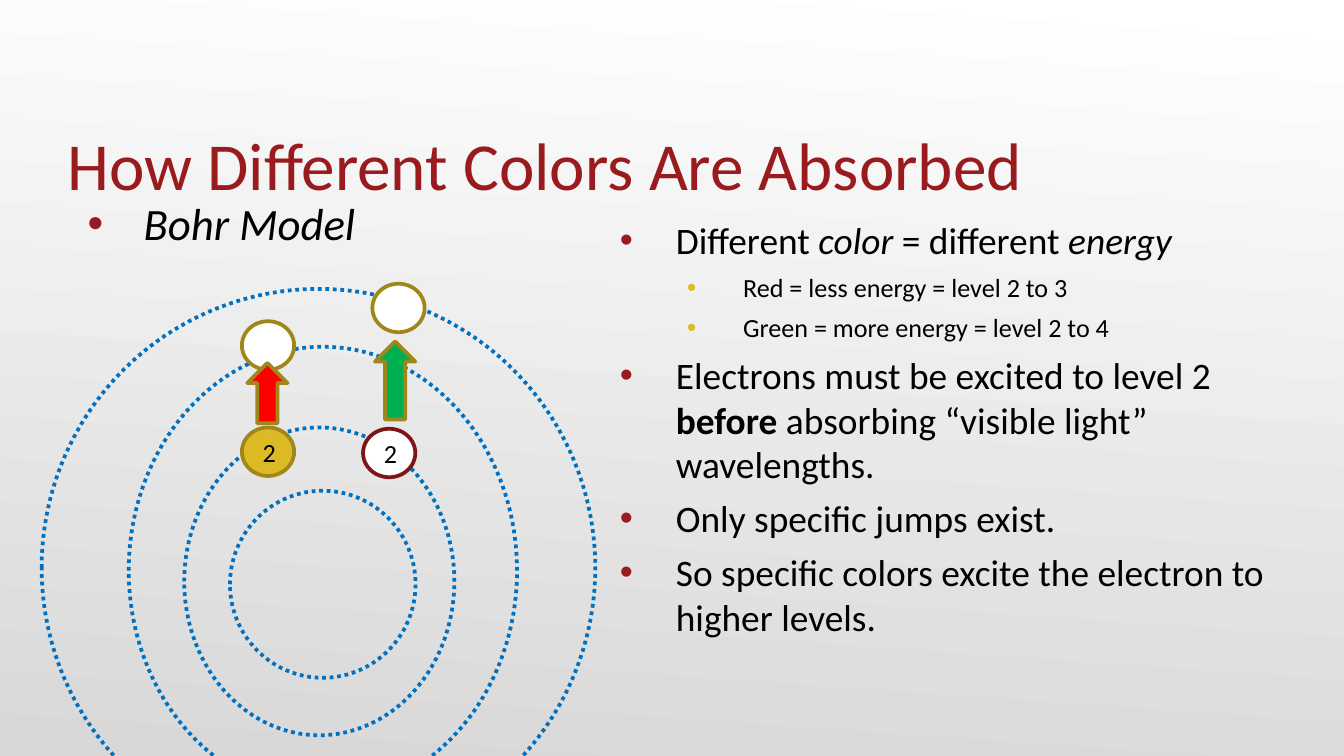
from lxml import etree
from pptx import Presentation
from pptx.dml.color import RGBColor
from pptx.enum.dml import MSO_LINE
from pptx.enum.shapes import MSO_SHAPE as Preset
from pptx.enum.text import MSO_ANCHOR as Anchor, PP_ALIGN as Align
from pptx.oxml.ns import qn
from pptx.util import Pt

FONT = "Calibri"
BLACK, WHITE = "000000", "FFFFFF"
RED, DARK_RED = "991B1E", "7D1619"
GOLD, DARK_GOLD = "DCBA25", "A0871B"
ORBIT_BLUE = "0070C0"
ELECTRON_SIZE = (28, 26)


def color(hex_code):
    return RGBColor.from_string(hex_code)


def set_font(font, size, hex_code):
    font.name = FONT
    font.size = Pt(size)
    font.color.rgb = color(hex_code)


def paint_background(slide):
    fill = slide.background.fill
    fill.gradient()
    fill.gradient_angle = 266
    for stop, hex_code in zip(fill.gradient_stops, (WHITE, "D8D8D8")):
        stop.color.rgb = color(hex_code)


def add_text_area(slide, left, top, width, height):
    area = slide.shapes.add_textbox(Pt(left), Pt(top), Pt(width), Pt(height))
    area.text_frame.word_wrap = True
    return area.text_frame


def add_title(slide, wording):
    frame = add_text_area(slide, 36, 42, 648, 67.5)
    frame.vertical_anchor = Anchor.BOTTOM
    frame.margin_left = frame.margin_right = frame.margin_bottom = 0
    heading = frame.paragraphs[0]
    heading.text = wording
    set_font(heading.font, 36, RED)


def add_bullet(paragraph, level, bullet_color):
    paragraph.level = level
    properties = paragraph._p.get_or_add_pPr()
    properties.set("marL", str(Pt(36 * (level + 1))))
    properties.set("indent", str(Pt(-30)))
    tint = etree.SubElement(properties, qn("a:buClr"))
    etree.SubElement(tint, qn("a:srgbClr"), val=bullet_color)
    etree.SubElement(properties, qn("a:buFont"), typeface="Arial")
    etree.SubElement(properties, qn("a:buChar"), char="•")


def add_bullets(slide, box, points):
    frame = add_text_area(slide, *box)
    for index, (level, size, pieces) in enumerate(points):
        point = frame.add_paragraph() if index else frame.paragraphs[0]
        add_bullet(point, level, GOLD if level else RED)
        if index:
            point.space_before = Pt(4.8)
        set_font(point.font, size, BLACK)
        for wording, emphasis in pieces:
            run = point.add_run()
            run.text = wording
            if emphasis == "italic":
                run.font.italic = True
            elif emphasis == "bold":
                run.font.bold = True


def add_outlined(slide, preset, box, line_color, fill_color=None):
    outlined = slide.shapes.add_shape(preset, *(Pt(length) for length in box))
    outlined.shadow.inherit = False
    outlined.line.color.rgb = color(line_color)
    outlined.line.width = Pt(2)
    if fill_color:
        outlined.fill.solid()
        outlined.fill.fore_color.rgb = color(fill_color)
    else:
        outlined.fill.background()
    return outlined


def add_orbit(slide, *box):
    orbit = add_outlined(slide, Preset.OVAL, box, ORBIT_BLUE)
    orbit.line.dash_style = MSO_LINE.ROUND_DOT


def add_electron(slide, left, top, line_color, fill_color, level=""):
    box = (left, top, *ELECTRON_SIZE)
    electron = add_outlined(slide, Preset.OVAL, box, line_color, fill_color)
    if level:
        frame = electron.text_frame
        frame.vertical_anchor = Anchor.MIDDLE
        label = frame.paragraphs[0]
        label.text = level
        label.alignment = Align.CENTER
        set_font(label.font, 14, BLACK)


def add_jump(slide, left, top, height, fill_color):
    box = (left, top, 21.6, height)
    add_outlined(slide, Preset.UP_ARROW, box, DARK_GOLD, fill_color)


def add_bohr_model(slide):
    add_orbit(slide, 98.7, 229, 144.7, 164.9)
    add_orbit(slide, 22.3, 154.8, 296.6, 298.8)
    add_orbit(slide, 69, 185.8, 208, 239.8)
    add_orbit(slide, 123.2, 262.9, 99.4, 100.2)

    add_electron(slide, 129.6, 229, DARK_GOLD, GOLD, "2")
    add_electron(slide, 194.5, 229.7, DARK_RED, WHITE, "2")
    add_electron(slide, 129.6, 172.1, DARK_GOLD, WHITE)
    add_electron(slide, 199.5, 152, DARK_GOLD, WHITE)

    add_jump(slide, 132.5, 194.4, 32.4, "FF0000")
    add_jump(slide, 200.9, 182.9, 41.8, "00B050")


def main():
    deck = Presentation()
    deck.slide_width, deck.slide_height = Pt(720), Pt(405)
    slide = deck.slides.add_slide(deck.slide_layouts[6])
    paint_background(slide)
    add_title(slide, "How Different Colors Are Absorbed")
    add_bullets(slide, (33.8, 101.5, 282.2, 262), [
        (0, 24, [("Bohr Model", "italic")]),
    ])
    add_bullets(slide, (319, 113, 367.2, 262), [
        (0, 20, [("Different ", ""), ("color", "italic"),
                 (" = different ", ""), ("energy", "italic")]),
        (1, 14, [("Red = less energy = level 2 to 3", "")]),
        (1, 14, [("Green = more energy = level 2 to 4", "")]),
        (0, 20, [("Electrons must be excited to level 2 ", ""),
                 ("before", "bold"),
                 (" absorbing “visible light” wavelengths.", "")]),
        (0, 20, [("Only specific jumps exist.", "")]),
        (0, 20, [("So specific colors excite the electron to higher levels.", "")]),
    ])
    add_bohr_model(slide)
    deck.save("out.pptx")


if __name__ == "__main__":
    main()
